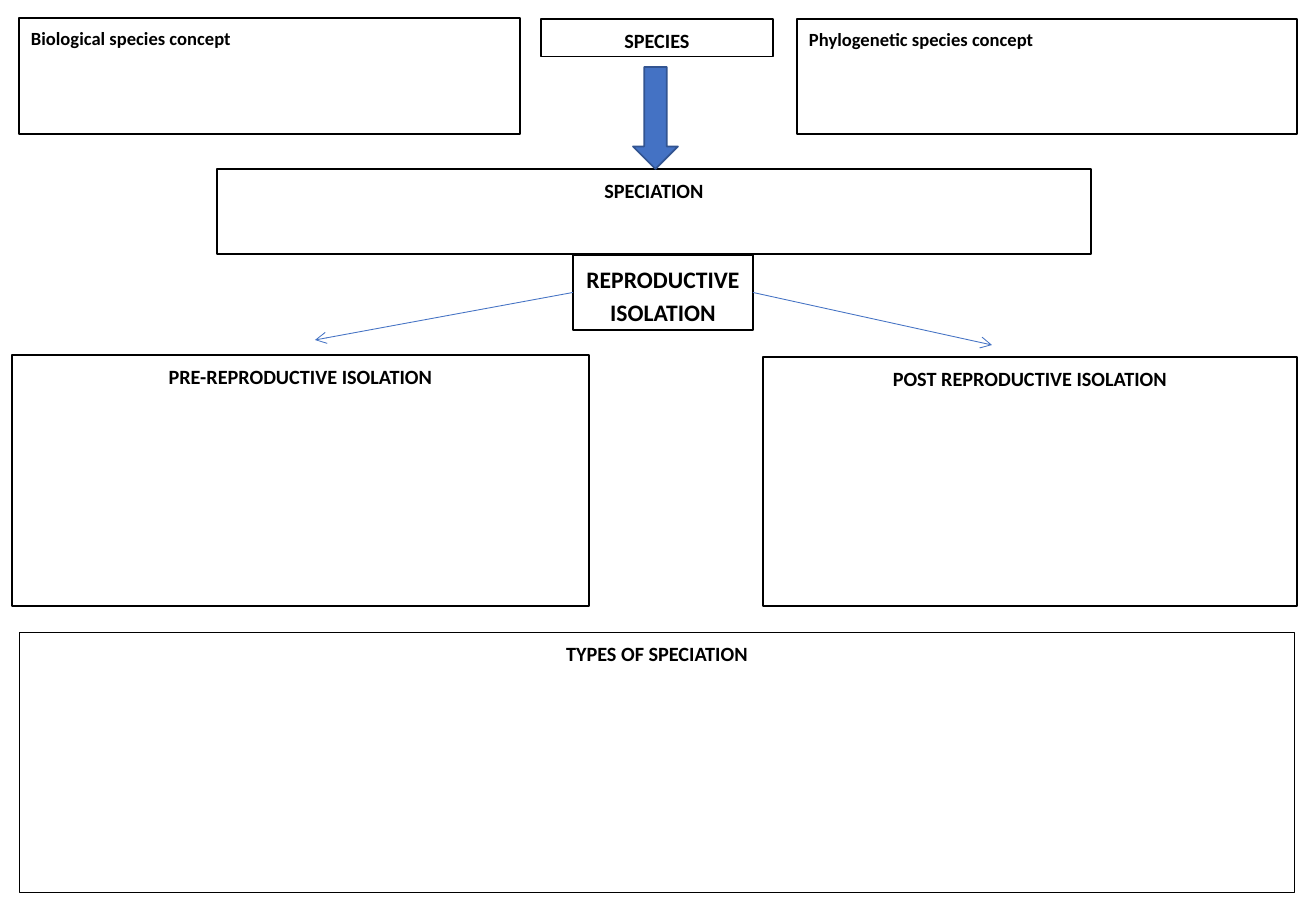
from dataclasses import dataclass

from lxml.etree import SubElement
from pptx import Presentation
from pptx.dml.color import RGBColor
from pptx.enum.shapes import MSO_CONNECTOR, MSO_SHAPE
from pptx.enum.text import MSO_ANCHOR, PP_ALIGN
from pptx.oxml.ns import qn
from pptx.util import Pt

EMU_PER_PX = 7526
SLIDE_SIZE = (1316, 911)


@dataclass(frozen=True)
class Theme:
    font: str = "Calibri"
    ink: RGBColor = RGBColor(0x00, 0x00, 0x00)
    paper: RGBColor = RGBColor(0xFF, 0xFF, 0xFF)
    accent: RGBColor = RGBColor(0x44, 0x72, 0xC4)
    accent_edge: RGBColor = RGBColor(0x32, 0x54, 0x91)
    concept_size: float = 11
    heading_size: float = 12
    focus_size: float = 14
    box_line: float = 0.75
    thin_line: float = 0.5
    arrow_line: float = 1


THEME = Theme()
LEFT, CENTER = PP_ALIGN.LEFT, PP_ALIGN.CENTER

BOXES = [
    ("SPECIES", (541, 19, 232, 38), CENTER, THEME.heading_size, THEME.box_line),
    ("Biological species concept", (19, 18, 501, 116), LEFT, THEME.concept_size, THEME.box_line),
    ("Phylogenetic species concept", (797, 19, 500, 115), LEFT, THEME.concept_size, THEME.box_line),
    ("SPECIATION", (217, 169, 874, 85), CENTER, THEME.heading_size, THEME.box_line),
    ("PRE-REPRODUCTIVE ISOLATION", (12, 355, 577, 251), CENTER, THEME.heading_size, THEME.box_line),
    ("POST REPRODUCTIVE ISOLATION", (763, 357, 534, 249), CENTER, THEME.heading_size, THEME.box_line),
    ("TYPES OF SPECIATION", (19, 632, 1276, 261), CENTER, THEME.heading_size, THEME.thin_line),
    ("REPRODUCTIVE ISOLATION", (573, 255, 180, 75), CENTER, THEME.focus_size, THEME.box_line),
]
DOWN_ARROW = (633, 67, 45, 102)
BRANCHES = [(1, (315, 340)), (3, (992, 345))]


def px(*lengths):
    return [length * EMU_PER_PX for length in lengths]


def add_filled_shape(slide, preset, place, fill, line, line_width):
    shape = slide.shapes.add_shape(preset, *px(*place))
    shape.shadow.inherit = False
    shape.fill.solid()
    shape.fill.fore_color.rgb = fill
    shape.line.color.rgb = line
    shape.line.width = Pt(line_width)
    return shape


def add_box(slide, text, place, alignment, size, line_width):
    shape = add_filled_shape(slide, MSO_SHAPE.RECTANGLE, place, THEME.paper, THEME.ink, line_width)
    frame = shape.text_frame
    frame.word_wrap = True
    frame.vertical_anchor = MSO_ANCHOR.TOP
    paragraph = frame.paragraphs[0]
    paragraph.alignment = alignment
    paragraph.line_spacing = 1.15
    paragraph.space_after = Pt(10)
    run = paragraph.add_run()
    run.text = text
    run.font.name = THEME.font
    run.font.size = Pt(size)
    run.font.bold = True
    run.font.color.rgb = THEME.ink
    return shape


def add_branch(slide, source, side, target):
    connector = slide.shapes.add_connector(MSO_CONNECTOR.STRAIGHT, 0, 0, *px(*target))
    connector.begin_connect(source, side)
    connector.line.color.rgb = THEME.accent
    connector.line.width = Pt(THEME.thin_line)
    SubElement(connector.line._get_or_add_ln(), qn("a:tailEnd"), type="arrow")
    SubElement(connector._element.spPr, qn("a:effectLst"))


def main():
    presentation = Presentation()
    presentation.slide_width, presentation.slide_height = px(*SLIDE_SIZE)
    slide = presentation.slides.add_slide(presentation.slide_layouts[6])
    boxes = {box[0]: add_box(slide, *box) for box in BOXES}
    add_filled_shape(slide, MSO_SHAPE.DOWN_ARROW, DOWN_ARROW,
                     THEME.accent, THEME.accent_edge, THEME.arrow_line)
    for side, target in BRANCHES:
        add_branch(slide, boxes["REPRODUCTIVE ISOLATION"], side, target)
    presentation.save("out.pptx")


if __name__ == "__main__":
    main()
